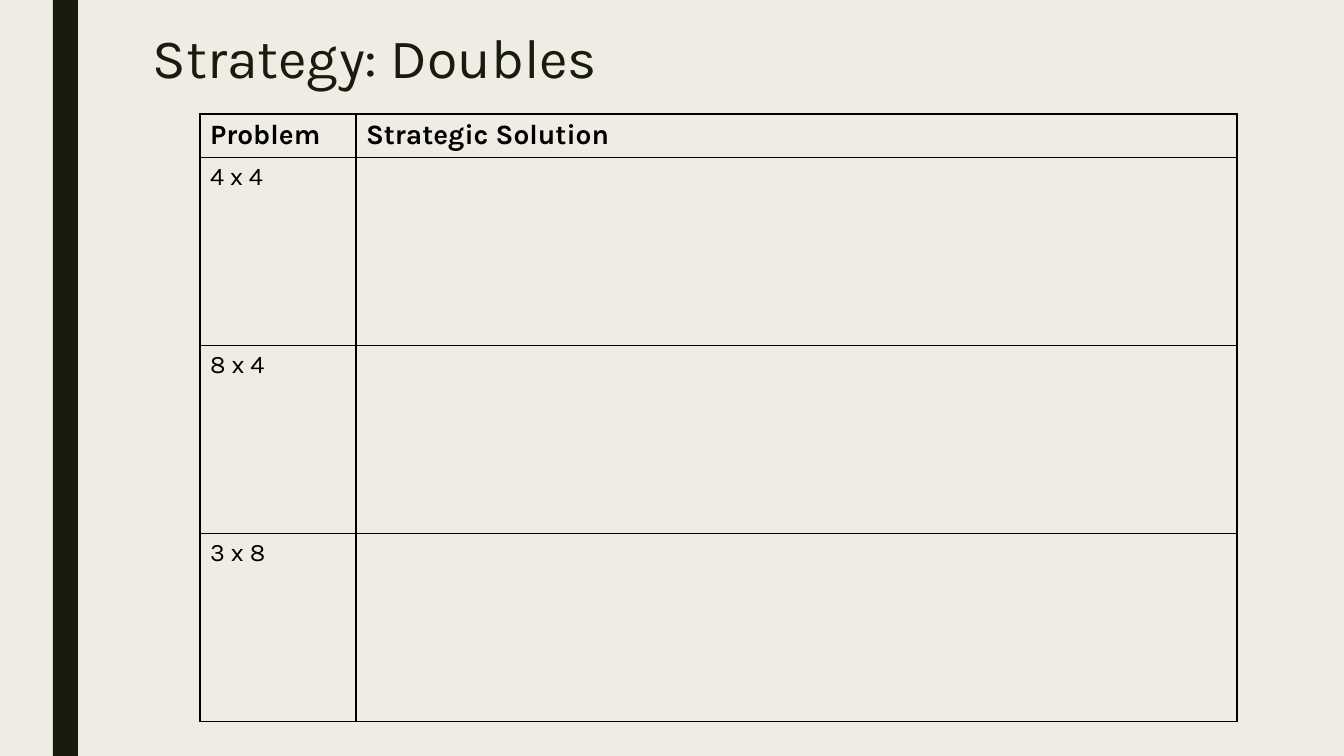
from dataclasses import dataclass

from lxml import etree
from pptx import Presentation
from pptx.dml.color import RGBColor
from pptx.enum.shapes import MSO_SHAPE
from pptx.enum.text import MSO_ANCHOR
from pptx.oxml.ns import qn
from pptx.slide import Slide
from pptx.table import _Cell
from pptx.text.text import TextFrame
from pptx.util import Emu, Pt

RECTANGLE = MSO_SHAPE.RECTANGLE
MIDDLE = MSO_ANCHOR.MIDDLE

CREAM = RGBColor(0xEF, 0xED, 0xE3)
DARK_OLIVE = RGBColor(0x19, 0x1B, 0x0E)
BLACK = RGBColor(0x00, 0x00, 0x00)

FONT = "Karla"
EMU_PER_INCH = 914400
PX_PER_INCH = 100.8
BORDER_WIDTH = Pt(1)
BORDER_SIDES = ("a:lnL", "a:lnR", "a:lnT", "a:lnB")

COLUMN_WIDTHS = (156, 881)
HEADER_HEIGHT = 43
PROBLEM_HEIGHT = 188


@dataclass(frozen=True)
class Box:
    left: int
    top: int
    width: int
    height: int

    def emu(self) -> tuple[Emu, Emu, Emu, Emu]:
        return px(self.left), px(self.top), px(self.width), px(self.height)


@dataclass(frozen=True)
class TextStyle:
    size: float
    color: RGBColor
    bold: bool = False


@dataclass(frozen=True)
class TableRow:
    problem: str
    solution: str
    height: int
    style: TextStyle


TITLE_STYLE = TextStyle(39.6, DARK_OLIVE)
HEADER_STYLE = TextStyle(20, BLACK, bold=True)
PROBLEM_STYLE = TextStyle(18, BLACK)

SIDE_BAR = Box(53, 0, 25, 756)
TITLE_BOX = Box(143, 23, 1058, 76)
ROWS = [TableRow("Problem", "Strategic Solution", HEADER_HEIGHT, HEADER_STYLE)] + [
    TableRow(problem, "", PROBLEM_HEIGHT, PROBLEM_STYLE)
    for problem in ("4 x 4", "8 x 4", "3 x 8")
]
TABLE_BOX = Box(200, 114, sum(COLUMN_WIDTHS), sum(row.height for row in ROWS))


def px(length: int) -> Emu:
    return Emu(round(length * EMU_PER_INCH / PX_PER_INCH))


def write_text(text_frame: TextFrame, text: str, style: TextStyle) -> None:
    text_frame.text = text
    for run in text_frame.paragraphs[0].runs:
        run.font.name = FONT
        run.font.size = Pt(style.size)
        run.font.bold = style.bold
        run.font.color.rgb = style.color


def add_side_bar(slide: Slide) -> None:
    bar = slide.shapes.add_shape(RECTANGLE, *SIDE_BAR.emu())
    bar.shadow.inherit = False
    bar.fill.solid()
    bar.fill.fore_color.rgb = DARK_OLIVE
    bar.line.fill.background()


def add_title(slide: Slide) -> None:
    text_frame = slide.shapes.add_textbox(*TITLE_BOX.emu()).text_frame
    text_frame.word_wrap = True
    text_frame.vertical_anchor = MIDDLE
    write_text(text_frame, "Strategy: Doubles", TITLE_STYLE)
    text_frame.paragraphs[0].line_spacing = 0.89


def set_borders(cell: _Cell) -> None:
    properties = cell._tc.get_or_add_tcPr()
    for position, side in enumerate(BORDER_SIDES):
        line = etree.Element(qn(side), w=str(BORDER_WIDTH))
        fill = etree.SubElement(line, qn("a:solidFill"))
        etree.SubElement(fill, qn("a:srgbClr"), val=str(BLACK))
        properties.insert(position, line)


def add_problem_table(slide: Slide) -> None:
    frame = slide.shapes.add_table(len(ROWS), len(COLUMN_WIDTHS), *TABLE_BOX.emu())
    table = frame.table
    table.horz_banding = False
    for column, width in zip(table.columns, COLUMN_WIDTHS):
        column.width = px(width)
    for table_row, row in zip(table.rows, ROWS):
        table_row.height = px(row.height)
        for cell, text in zip(table_row.cells, (row.problem, row.solution)):
            cell.fill.background()
            set_borders(cell)
            write_text(cell.text_frame, text, row.style)


def main() -> None:
    presentation = Presentation()
    presentation.slide_width = px(1344)
    presentation.slide_height = px(756)
    slide = presentation.slides.add_slide(presentation.slide_layouts[6])
    slide.background.fill.solid()
    slide.background.fill.fore_color.rgb = CREAM
    add_side_bar(slide)
    add_title(slide)
    add_problem_table(slide)
    presentation.save("out.pptx")


if __name__ == "__main__":
    main()
